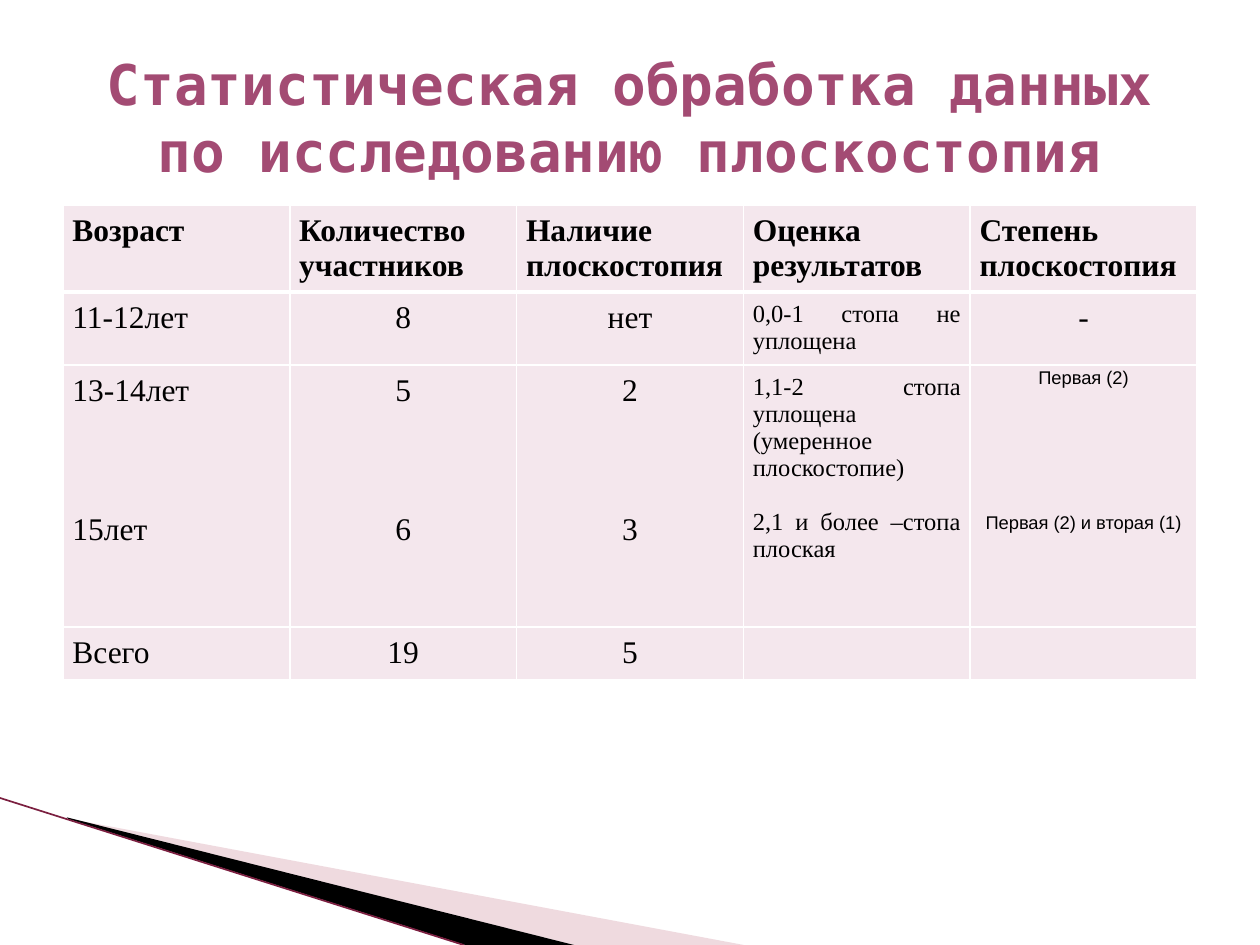
import pptx
import pptx.util
import pptx.dml.color
import pptx.enum.shapes
import pptx.enum.text
import pptx.oxml
import pptx.oxml.ns

Pt = pptx.util.Pt
ALIGN = pptx.enum.text.PP_ALIGN
COLORS = {"title": "A34B73", "text": "000000", "cell": "F4E7ED", "border": "FFFFFF",
          "pale": "D8A3AF", "dark": "000000", "edge": "7B1F40"}

TITLE = "Статистическая обработка данных по исследованию плоскостопия"
ROWS = [
    [["Возраст"], ["Количество участников"], ["Наличие", "плоскостопия"],
     ["Оценка результатов"], ["Степень", "плоскостопия"]],
    [["11-12лет"], ["8"], ["нет"], ["0,0-1 стопа не уплощена"], ["-"]],
    [["13-14лет", "15лет"], ["5", "6"], ["2", "3"],
     ["1,1-2 стопа уплощена (умеренное плоскостопие)", "2,1 и более –стопа плоская"],
     ["Первая (2)", "Первая (2) и вторая (1)"]],
    [["Всего"], ["19"], ["5"], [], []],
]
ROW_HEIGHTS = [49.7, 41.7, 149.7, 30.3]
COLUMN_WIDTH = 129.6
BODY_ALIGN = [ALIGN.LEFT, ALIGN.CENTER, ALIGN.CENTER, ALIGN.JUSTIFY, ALIGN.CENTER]
AGES_ROW, RESULT_COLUMN, DEGREE_COLUMN = 2, 3, 4
WEDGES = [
    ("pale", 40, [(39.6, 468.4), (425, 540), (328.3, 540), (39.6, 468)]),
    ("dark", 100, [(38.2, 467.3), (328, 540), (266, 540), (38.9, 468)]),
]


def rgb(name):
    return pptx.dml.color.RGBColor.from_string(COLORS[name])


def add_run(paragraph, text, size, font, color, bold):
    run = paragraph.add_run()
    run.text = text
    run.font.size = Pt(size)
    run.font.name = font
    run.font.bold = bold
    run.font.color.rgb = rgb(color)


def set_borders(cell, top, bottom):
    properties = cell._tc.get_or_add_tcPr()
    widths = {"lnL": 1, "lnR": 1, "lnT": top, "lnB": bottom}
    for position, (tag, width) in enumerate(widths.items()):
        properties.insert(position, pptx.oxml.parse_xml(
            f'<a:{tag} {pptx.oxml.ns.nsdecls("a")} w="{Pt(width)}"><a:solidFill>'
            f'<a:srgbClr val="{COLORS["border"]}"/></a:solidFill></a:{tag}>'))


def add_wedge(slide, color, opacity, points):
    builder = slide.shapes.build_freeform(*points[0], scale=Pt(1))
    builder.add_line_segments(points[1:], close=True)
    wedge = builder.convert_to_shape()
    wedge.shadow.inherit = False
    wedge.line.fill.background()
    wedge.fill.solid()
    wedge.fill.fore_color.rgb = rgb(color)
    if opacity < 100:
        tint = wedge._element.spPr.find(".//" + pptx.oxml.ns.qn("a:srgbClr"))
        tint.append(pptx.oxml.parse_xml(
            f'<a:alpha {pptx.oxml.ns.nsdecls("a")} val="{opacity * 1000}"/>'))


def add_edge(slide):
    edge = slide.shapes.add_connector(
        pptx.enum.shapes.MSO_CONNECTOR.STRAIGHT, Pt(0), Pt(456), Pt(265), Pt(540))
    edge.line.color.rgb = rgb("edge")
    edge.line.width = Pt(0.95)
    edge._element.spPr.append(pptx.oxml.parse_xml(
        f'<a:effectLst {pptx.oxml.ns.nsdecls("a")}/>'))


def fill_cell(cell, row, column, lines):
    header = row == 0
    degree = row == AGES_ROW and column == DEGREE_COLUMN
    result = not header and column == RESULT_COLUMN
    size, font, gap = 18, "Times New Roman", 59.5
    if degree:
        size, font, gap = 10.5, "Arial", 69.5
    elif result:
        size, gap = 14, 15.4

    cell.fill.solid()
    cell.fill.fore_color.rgb = rgb("cell")
    cell.margin_left = cell.margin_right = Pt(5.4)
    cell.margin_top = cell.margin_bottom = Pt(0 if degree or not lines else 5)
    set_borders(cell, 3 if row == 1 else 1, 3 if header else 1)
    for index, line in enumerate(lines):
        paragraph = cell.text_frame.paragraphs[0] if index == 0 else cell.text_frame.add_paragraph()
        paragraph.alignment = ALIGN.LEFT if header else BODY_ALIGN[column]
        if degree:
            paragraph.line_spacing = 1.15
        if index and not header:
            paragraph.space_before = Pt(gap)
        add_run(paragraph, line, size, font, "text", header)


def add_statistics(slide):
    columns = len(ROWS[0])
    statistics = slide.shapes.add_table(
        len(ROWS), columns, Pt(36), Pt(117), Pt(columns * COLUMN_WIDTH),
        Pt(sum(ROW_HEIGHTS))).table
    statistics.first_row = False
    statistics.horz_banding = False
    for column in statistics.columns:
        column.width = Pt(COLUMN_WIDTH)
    for row, cells in enumerate(ROWS):
        statistics.rows[row].height = Pt(ROW_HEIGHTS[row])
        for column, lines in enumerate(cells):
            fill_cell(statistics.cell(row, column), row, column, lines)


def add_title(slide):
    frame = slide.shapes.add_textbox(Pt(36), Pt(21.6), Pt(648), Pt(90)).text_frame
    frame.word_wrap = True
    frame.vertical_anchor = pptx.enum.text.MSO_ANCHOR.MIDDLE
    heading = frame.paragraphs[0]
    heading.alignment = ALIGN.CENTER
    add_run(heading, TITLE, 32, "DejaVu Sans Mono", "title", True)


def main():
    deck = pptx.Presentation()
    deck.slide_width, deck.slide_height = Pt(720), Pt(540)
    slide = deck.slides.add_slide(deck.slide_layouts[6])
    for color, opacity, points in WEDGES:
        add_wedge(slide, color, opacity, points)
    add_edge(slide)
    add_statistics(slide)
    add_title(slide)
    deck.save("out.pptx")


if __name__ == "__main__":
    main()
